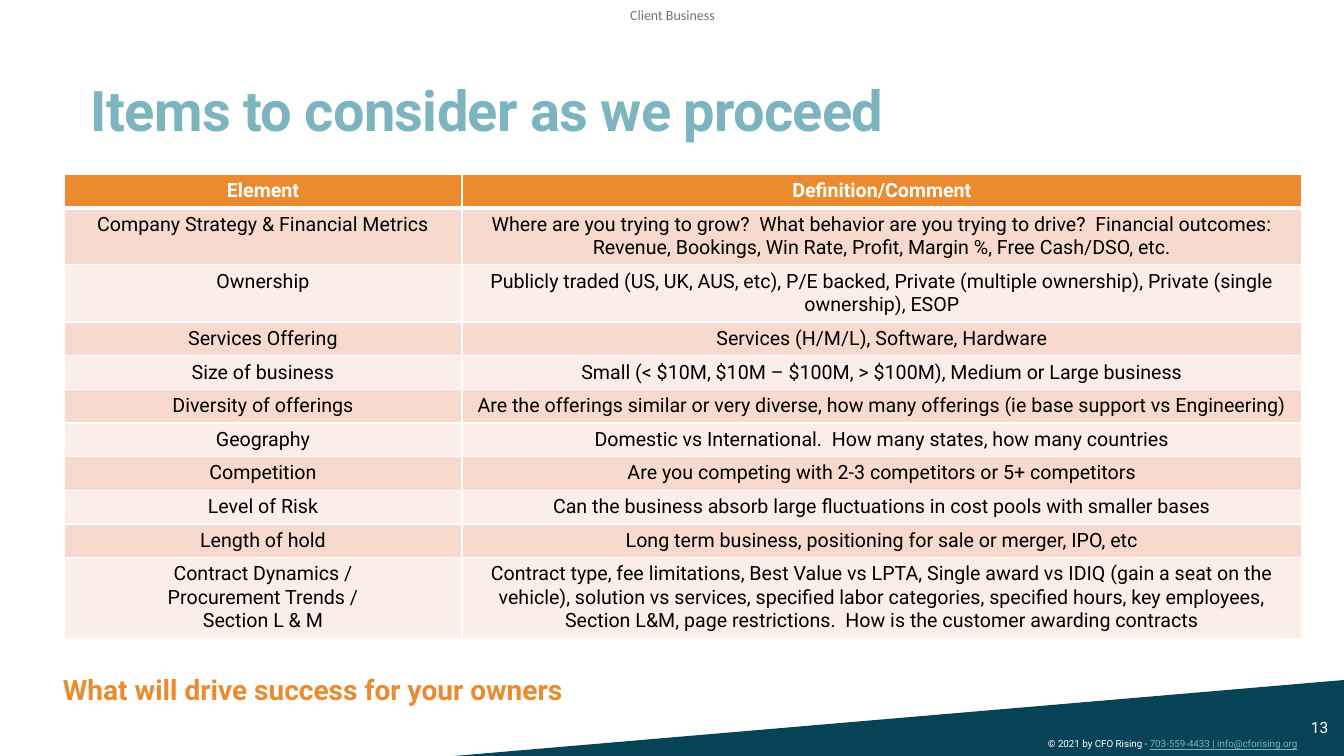
import lxml.etree
import pptx
import pptx.dml.color
import pptx.enum.shapes
import pptx.enum.text
import pptx.oxml.ns
import pptx.util

PX = 914400 / 100.8
COLORS = {
    "teal": "7CB4C0", "navy": "074356", "white": "FFFFFF", "black": "000000",
    "gray": "737373", "orange": "EB8A2F", "closing": "EB8B30",
    "peach": "F7DACD", "cream": "FBEDE8",
}
ALIGN = pptx.enum.text.PP_ALIGN
ANCHOR = pptx.enum.text.MSO_ANCHOR


def px(*lengths):
    """Turn px lengths into a list of EMU lengths."""
    return [pptx.util.Emu(round(length * PX)) for length in lengths]


def add_span(para, text, size, color, bold=False, font="Roboto"):
    span = para.add_run()
    span.text = text
    span.font.size = pptx.util.Pt(size)
    span.font.name = font
    span.font.bold = bold
    span.font.color.rgb = pptx.dml.color.RGBColor.from_string(COLORS[color])
    return span


deck = pptx.Presentation()
deck.slide_width, deck.slide_height = px(1344, 756)
page = deck.slides.add_slide(deck.slide_layouts[6])

# Corner wedge
wedge = page.shapes.add_shape(
    pptx.enum.shapes.MSO_SHAPE.RIGHT_TRIANGLE, *px(454, 680, 890, 76))
wedge.shadow.inherit = False
wedge.fill.solid()
wedge.fill.fore_color.rgb = pptx.dml.color.RGBColor.from_string(COLORS["navy"])
wedge.line.fill.background()
wedge.element.spPr.get_or_add_xfrm().set("flipH", "1")

# Text boxes: place, side inset, anchor, alignment, wrap, spans
boxes = {}
for name, place, inset, anchor, align, wrap, spans in [
    ("label", (615, 0, 115, 29), 0, ANCHOR.MIDDLE, ALIGN.CENTER, True,
     [("Client Business", 10, "gray", False, "Calibri")]),
    ("title", (81, 56, 1124, 92), 10, ANCHOR.BOTTOM, ALIGN.LEFT, True,
     [("Items to consider as we proceed", 40, "teal", True)]),
    ("closing", (63, 668, 1260, 50), 0, ANCHOR.TOP, ALIGN.LEFT, True,
     [("What will drive success for your owners", 20, "closing", True)]),
    ("copyright", (1038, 733, 300, 23), 10, ANCHOR.TOP, ALIGN.LEFT, False,
     [("© 2021 by CFO Rising - ", 7, "white"),
      ("703-559-4433 | info@cforising.org", 7, "teal")]),
    ("number", (1301, 707, 43, 40), 10, ANCHOR.MIDDLE, ALIGN.LEFT, False,
     [("13", 11, "white")]),
]:
    box = page.shapes.add_textbox(*px(*place))
    frame = box.text_frame
    frame.word_wrap = wrap
    frame.vertical_anchor = anchor
    frame.margin_left, frame.margin_right = px(inset, inset)
    para = frame.paragraphs[0]
    para.alignment = align
    for span in spans:
        add_span(para, *span)
    boxes[name] = para

boxes["title"].line_spacing = 0.85
boxes["title"].runs[0].font._element.set("spc", "-50")
boxes["copyright"].runs[1].font.underline = True

# Table: element, comment, number of text lines
rows = [
    ("Element", "Definition/Comment", 1),
    ("Company Strategy & Financial Metrics",
     "Where are you trying to grow?  What behavior are you trying to drive?  "
     "Financial outcomes: Revenue, Bookings, Win Rate, Profit, Margin %, "
     "Free Cash/DSO, etc.", 2),
    ("Ownership",
     "Publicly traded (US, UK, AUS, etc), P/E backed, Private (multiple "
     "ownership), Private (single ownership), ESOP", 2),
    ("Services Offering", "Services (H/M/L), Software, Hardware", 1),
    ("Size of business",
     "Small (< $10M, $10M – $100M, > $100M), Medium or Large business", 1),
    ("Diversity of offerings",
     "Are the offerings similar or very diverse, how many offerings "
     "(ie base support vs Engineering)", 1),
    ("Geography",
     "Domestic vs International.  How many states, how many countries", 1),
    ("Competition",
     "Are you competing with 2-3 competitors or 5+ competitors", 1),
    ("Level of Risk",
     "Can the business absorb large fluctuations in cost pools with smaller "
     "bases", 1),
    ("Length of hold",
     "Long term business, positioning for sale or merger, IPO, etc", 1),
    ("Contract Dynamics /\nProcurement Trends /\nSection L & M",
     "Contract type, fee limitations, Best Value vs LPTA, Single award vs IDIQ "
     "(gain a seat on the vehicle), solution vs services, specified labor "
     "categories, specified hours, key employees, Section L&M, page "
     "restrictions.  How is the customer awarding contracts", 3),
]
heights = [33 + 23 * (lines - 1) for *_, lines in rows]
table = page.shapes.add_table(
    len(rows), 2, *px(64, 174, 1238, sum(heights))).table
table.columns[0].width, table.columns[1].width = px(398, 840)

for r, (*texts, _) in enumerate(rows):
    table.rows[r].height = px(heights[r])[0]
    header = r == 0
    fill = "orange" if header else ("cream", "peach")[r % 2]
    for c, text in enumerate(texts):
        cell = table.cell(r, c)
        properties = cell._tc.get_or_add_tcPr()
        for side in "LRTB":
            thick = (r, side) in ((0, "B"), (1, "T"))
            border = lxml.etree.SubElement(
                properties, pptx.oxml.ns.qn(f"a:ln{side}"),
                w=str(pptx.util.Pt(3 if thick else 1)))
            paint = lxml.etree.SubElement(
                border, pptx.oxml.ns.qn("a:solidFill"))
            lxml.etree.SubElement(
                paint, pptx.oxml.ns.qn("a:srgbClr"), val=COLORS["white"])
        cell.fill.solid()
        cell.fill.fore_color.rgb = pptx.dml.color.RGBColor.from_string(
            COLORS[fill])
        for i, line in enumerate(text.split("\n")):
            frame = cell.text_frame
            para = frame.add_paragraph() if i else frame.paragraphs[0]
            para.alignment = ALIGN.CENTER
            add_span(para, line, 14, "white" if header else "black", header)

deck.save("out.pptx")
